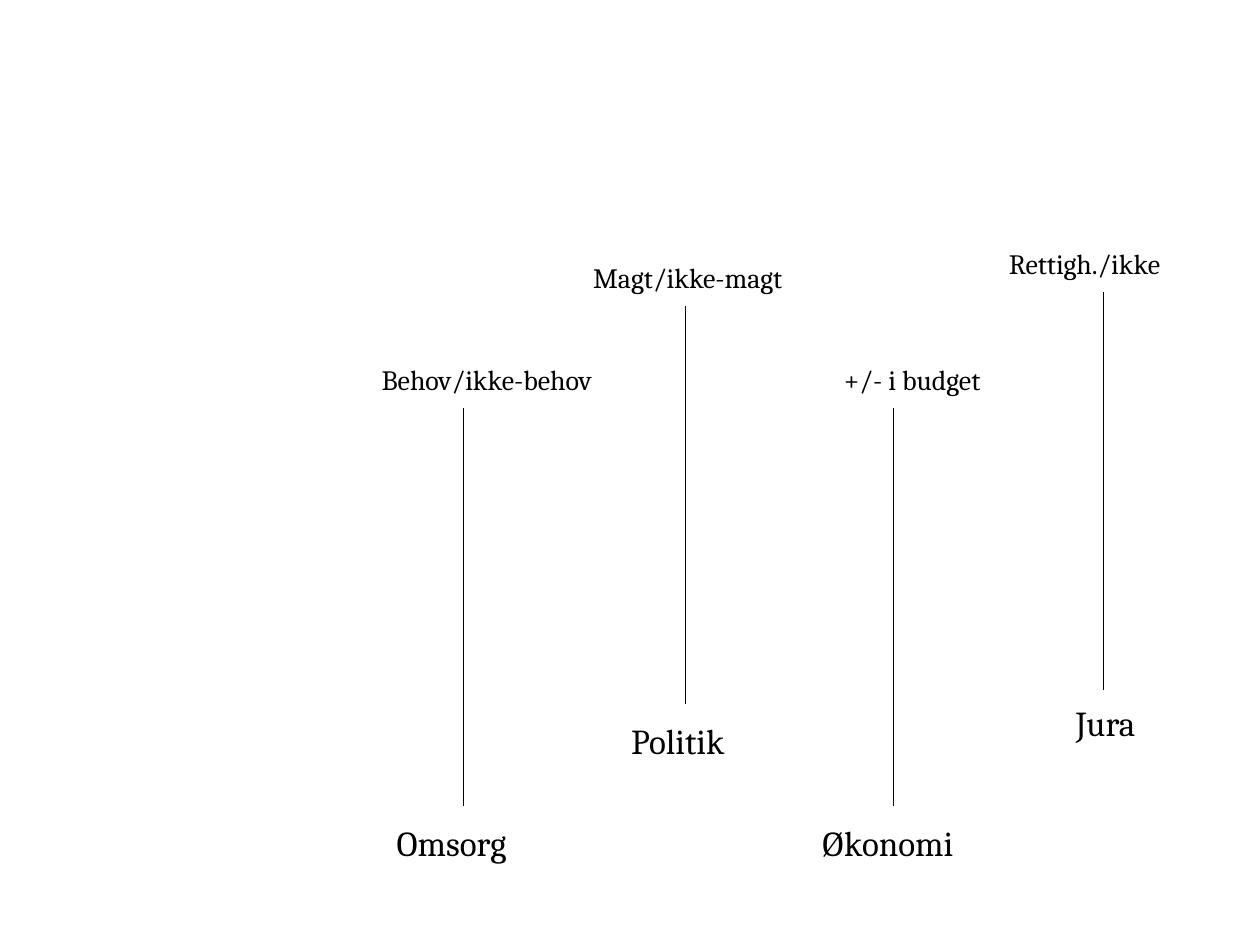
from dataclasses import dataclass

from lxml import etree
from pptx import Presentation
from pptx.dml.color import RGBColor
from pptx.enum.shapes import MSO_CONNECTOR
from pptx.enum.text import MSO_AUTO_SIZE, PP_ALIGN
from pptx.oxml.ns import qn
from pptx.shapes.group import GroupShape
from pptx.util import Inches, Pt

STRAIGHT = MSO_CONNECTOR.STRAIGHT
FIT = MSO_AUTO_SIZE.SHAPE_TO_FIT_TEXT
LEFT = PP_ALIGN.LEFT

BLACK = RGBColor(0x00, 0x00, 0x00)
FONT = "Cambria"
LENGTH = 3.16  # height of every pole
RISE = 0.41    # from the code's top edge to the pole


@dataclass
class Label:
    text: str
    left: float
    width: float


@dataclass
class Pole:
    x: float
    top: float
    code: Label
    name: Label
    drop: float = 3.23  # from the pole's top to the name


POLES = [
    Pole(7.09, 3.24, Label("+/- i budget", 6.6, 1.44),
         Label("Økonomi", 6.42, 1.38)),
    Pole(5.44, 2.43, Label("Magt/ikke-magt", 4.61, 1.78),
         Label("Politik", 4.91, 1.01)),
    Pole(8.76, 2.32, Label("Rettigh./ikke", 7.91, 1.46),
         Label("Jura", 8.44, 0.71), drop=3.2),
    Pole(3.68, 3.24, Label("Behov/ikke-behov", 2.93, 1.99),
         Label("Omsorg", 3.05, 1.2)),
]


def add_label(group: GroupShape, label: Label, top: float,
              height: float, size: int) -> None:
    box = group.shapes.add_textbox(Inches(label.left), Inches(top),
                                   Inches(label.width), Inches(height))
    frame = box.text_frame
    for key, value in {"word_wrap": False, "auto_size": FIT}.items():
        setattr(frame, key, value)
    para = frame.paragraphs[0]
    para.alignment = LEFT
    run = para.add_run()
    run.text = label.text
    for key, value in {"name": FONT, "size": Pt(size)}.items():
        setattr(run.font, key, value)
    run.font.color.rgb = BLACK


def add_line(group: GroupShape, x: float, top: float) -> None:
    line = group.shapes.add_connector(STRAIGHT, Inches(x), Inches(top),
                                      Inches(x), Inches(top + LENGTH))
    line.line.color.rgb = BLACK
    line.line.width = Pt(0.75)
    etree.SubElement(line._element.spPr, qn("a:effectLst"))


def main() -> None:
    deck = Presentation()
    deck.slide_width, deck.slide_height = Inches(10), Inches(7.5)
    slide = deck.slides.add_slide(deck.slide_layouts[6])

    # One group per system: name below, code above, pole between
    for pole in POLES:
        group = slide.shapes.add_group_shape()
        add_label(group, pole.name, pole.top + pole.drop, 0.43, 20)
        add_label(group, pole.code, pole.top - RISE, 0.37, 16)
        add_line(group, pole.x, pole.top)

    deck.save("out.pptx")


if __name__ == "__main__":
    main()
